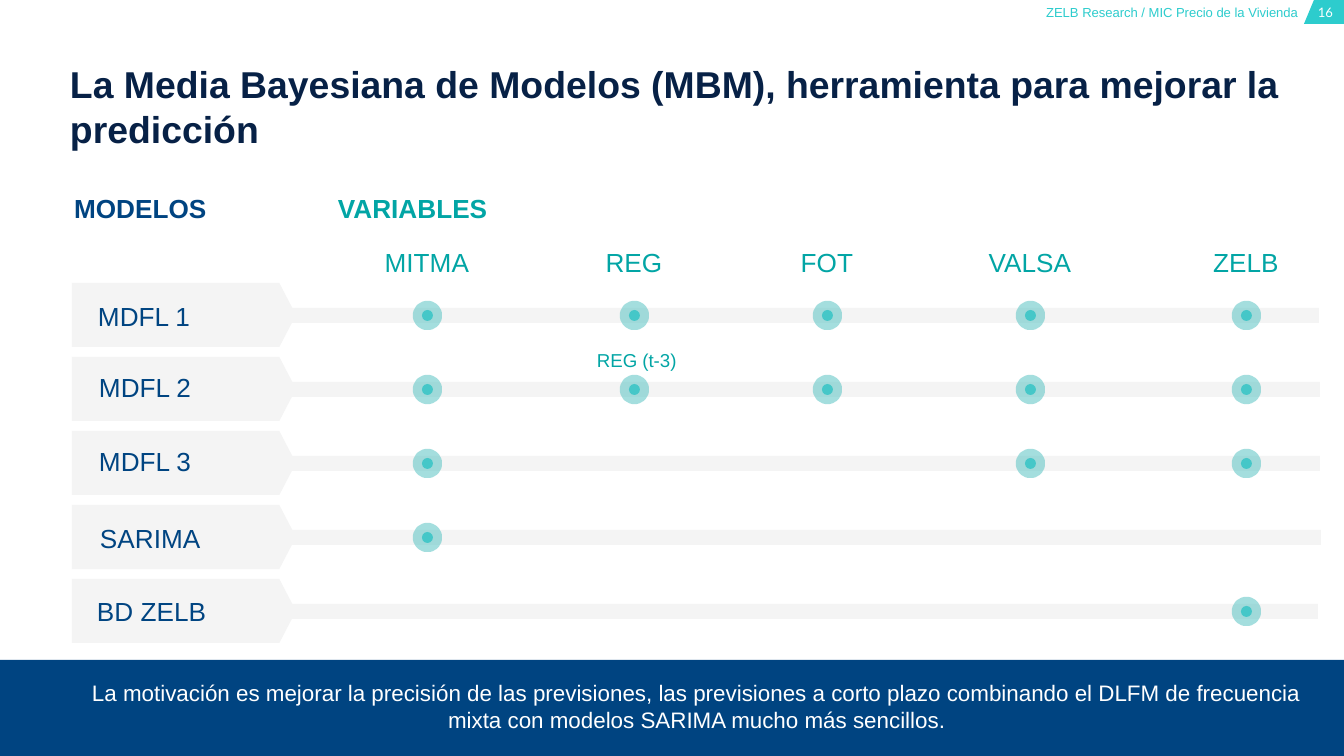
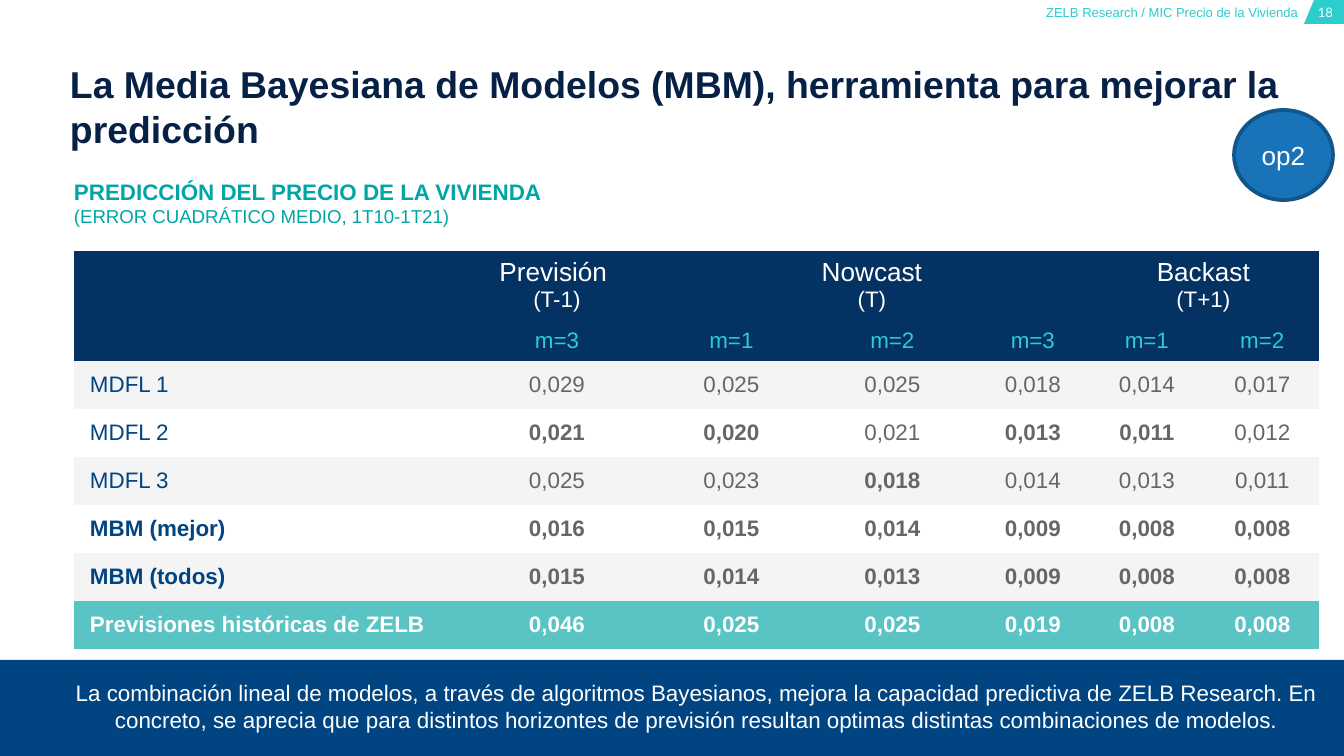
from lxml import etree
from pptx import Presentation
from pptx.dml.color import RGBColor
from pptx.enum.shapes import MSO_SHAPE
from pptx.enum.text import MSO_ANCHOR, MSO_AUTO_SIZE, PP_ALIGN
from pptx.oxml.ns import qn
from pptx.util import Pt

PX = 6804
LEFT, CENTER, RIGHT = PP_ALIGN.LEFT, PP_ALIGN.CENTER, PP_ALIGN.RIGHT
C = {name: RGBColor.from_string(value) for name, value in {
    "white": "FFFFFF", "band": "004481", "title": "072146", "aqua": "2DCCCD",
    "teal": "02A5A5", "ring": "5AC4C4", "light": "F4F4F4", "header": "043263",
    "text": "666666", "badge": "1973B8", "badge_line": "125588",
}.items()}


def add(s, kind, x, y, w, h, fill=None):
    box = [v * PX for v in (x, y, w, h)]
    if kind is None:
        return s.shapes.add_textbox(*box)
    sp = s.shapes.add_shape(kind, *box)
    sp.shadow.inherit = False
    sp.fill.solid()
    sp.fill.fore_color.rgb = C[fill]
    sp.line.fill.background()
    return sp


def write(sp, text, size, color, bold=False, align=LEFT, anchor=MSO_ANCHOR.TOP, font="Arial"):
    tf = sp.text_frame
    tf.text = text
    tf.word_wrap = True
    tf.auto_size = MSO_AUTO_SIZE.NONE
    tf.vertical_anchor = anchor
    tf.margin_left = tf.margin_right = tf.margin_top = tf.margin_bottom = 0
    for p in tf.paragraphs:
        p.alignment = align
        p.space_before = Pt(0)
        for r in p.runs:
            r.font.name = font
            r.font.size = Pt(size)
            r.font.bold = bold
            r.font.color.rgb = C[color]
    return tf.paragraphs


prs = Presentation()
prs.slide_width, prs.slide_height = 1344 * PX, 756 * PX

layout = prs.slide_layouts[0]
for ph in list(layout.placeholders)[2:]:
    ph.element.getparent().remove(ph.element)
s1, s2 = [prs.slides.add_slide(layout) for _ in range(2)]

band = add(s1, MSO_SHAPE.RECTANGLE, 0, 660, 1344, 96, "band")
builder = s1.shapes.build_freeform(1314, 0, scale=PX)
builder.add_line_segments([(1344, 0), (1344, 24), (1304, 24)], close=True)
tab = builder.convert_to_shape()
tab.shadow.inherit = False
tab.fill.solid()
tab.fill.fore_color.rgb = C["aqua"]
tab.line.fill.background()
running = add(s1, None, 1000, 4, 298, 16)
write(running, "ZELB Research / MIC Precio de la Vivienda", 7, "aqua", align=RIGHT)
for sp in (band, tab, running):
    layout.shapes.element.append(sp.element)

title = "La Media Bayesiana de Modelos (MBM), herramienta para mejorar la predicción"
messages = [
    (s1, "16", "La motivación es mejorar la precisión de las previsiones, las previsiones a corto "
     "plazo combinando el DLFM de frecuencia mixta con modelos SARIMA mucho más sencillos."),
    (s2, "18", "La combinación lineal de modelos, a través de algoritmos Bayesianos, mejora la "
     "capacidad predictiva de ZELB Research. En concreto, se aprecia que para distintos "
     "horizontes de previsión resultan optimas distintas combinaciones de modelos."),
]
for s, page, message in messages:
    heading, footer = s.shapes.title, s.placeholders[1]
    for sp, box in ((heading, (70, 61, 1250, 90)), (footer, (74, 679, 1246, 54))):
        sp.left, sp.top, sp.width, sp.height = [v * PX for v in box]
    write(heading, title, 20, "title", True)
    write(footer, message, 12, "white", align=CENTER, anchor=MSO_ANCHOR.MIDDLE)
    write(add(s, None, 1310, 4, 31, 16), page, 7, "white", align=CENTER, font="Lato")

write(add(s1, None, 74, 192, 203, 32), "MODELOS", 14, "band", True)
write(add(s1, None, 338, 192, 949, 32), "VARIABLES", 14, "teal", True)

variables = {"MITMA": 427, "REG": 634, "FOT": 827, "VALSA": 1030, "ZELB": 1246}
for name, x in variables.items():
    write(add(s1, None, x - 50, 246, 100, 32), name, 14, "teal", align=CENTER)

models = [
    ("MDFL 1", 98, 300, list(variables)),
    ("MDFL 2", 99, 371, list(variables)),
    ("MDFL 3", 99, 445, ["MITMA", "VALSA", "ZELB"]),
    ("SARIMA", 100, 522, ["MITMA"]),
    ("BD ZELB", 97, 595, ["ZELB"]),
]
for i, (name, x, y, used) in enumerate(models):
    middle = 315 + 74 * i
    plate = add(s1, MSO_SHAPE.PENTAGON, 72, middle - 32, 224, 64, "light")
    plate.adjustments[0] = 0.26
    add(s1, MSO_SHAPE.RECTANGLE, x + 131, middle - 7, 1090, 15, "light")
    write(add(s1, None, x, y, 132, 32), name, 14, "band")
    for variable in used:
        dot = add(s1, MSO_SHAPE.OVAL, variables[variable] - 5, middle - 5, 11, 11, "aqua")
        dot.line.color.rgb = C["ring"]
        dot.line.width = Pt(10)
        color = dot.element.spPr.find(qn("a:ln")).find(".//" + qn("a:srgbClr"))
        etree.SubElement(color, qn("a:alpha"), val="54000")
write(add(s1, None, 597, 349, 87, 23), "REG (t-3)", 10, "teal")

caption = add(s2, MSO_SHAPE.RECTANGLE, 74, 178, 1122, 54, "white")
ps = write(caption, "PREDICCIÓN DEL PRECIO DE LA VIVIENDA\n(ERROR CUADRÁTICO MEDIO, 1T10-1T21)",
           12, "teal", True)
ps[1].runs[0].font.size = Pt(10)
ps[1].runs[0].font.bold = False

badge = add(s2, MSO_SHAPE.OVAL, 1234, 110, 99, 90, "badge")
badge.line.color.rgb = C["badge_line"]
badge.line.width = Pt(2)
write(badge, "op2", 14, "white", align=CENTER, anchor=MSO_ANCHOR.MIDDLE)

groups = [(1, 1, "Previsión \n(T-1)"), (2, 4, "Nowcast\n(T)"), (5, 6, "Backast\n(T+1)")]
rows = [
    ("", "m=3", "m=1", "m=2", "m=3", "m=1", "m=2"),
    ("MDFL 1", "0,029", "0,025", "0,025", "0,018", "0,014", "0,017"),
    ("MDFL 2", "0,021", "0,020", "0,021", "0,013", "0,011", "0,012"),
    ("MDFL 3", "0,025", "0,023", "0,018", "0,014", "0,013", "0,011"),
    ("MBM (mejor)", "0,016", "0,015", "0,014", "0,009", "0,008", "0,008"),
    ("MBM (todos)", "0,015", "0,014", "0,013", "0,009", "0,008", "0,008"),
    ("Previsiones históricas de ZELB", "0,046", "0,025", "0,025", "0,019", "0,008", "0,008"),
]
row_styles = [
    ("header", "aqua", "aqua", ()),
    ("light", "band", "text", ()),
    ("white", "band", "text", (1, 2, 4, 5)),
    ("light", "band", "text", (3,)),
    ("white", "band", "text", range(7)),
    ("light", "band", "text", range(7)),
    ("ring", "white", "white", range(7)),
]
widths = [384, 198, 151, 171, 110, 118, 113]
heights = [69, 34] + [48] * 6
frame = s2.shapes.add_table(len(heights), len(widths), 74 * PX, 251 * PX,
                            sum(widths) * PX, sum(heights) * PX)
table = frame.table
table.first_row = table.horz_banding = False
for style in frame.element.iter(qn("a:tableStyleId")):
    style.text = "{2D5ABB26-0587-4C30-8999-92F81FD0307C}"
for column, w in zip(table.columns, widths):
    column.width = w * PX
for row, h in zip(table.rows, heights):
    row.height = h * PX

for cell in table.rows[0].cells:
    cell.fill.solid()
    cell.fill.fore_color.rgb = C["header"]
for first, last, text in groups:
    cell = table.cell(0, first)
    if last > first:
        cell.merge(table.cell(0, last))
    ps = write(cell, text, 14, "white", align=CENTER)
    ps[1].runs[0].font.size = Pt(12)

for i, (values, (fill, name_color, value_color, bold)) in enumerate(zip(rows, row_styles), 1):
    for j, value in enumerate(values):
        cell = table.cell(i, j)
        cell.fill.solid()
        cell.fill.fore_color.rgb = C[fill]
        cell.vertical_anchor = MSO_ANCHOR.MIDDLE
        cell.margin_right = cell.margin_top = cell.margin_bottom = 0
        cell.margin_left = 0 if j else 16 * PX
        write(cell, value, 12, value_color if j else name_color, j in bold,
              CENTER if j else LEFT)

prs.save("out.pptx")
